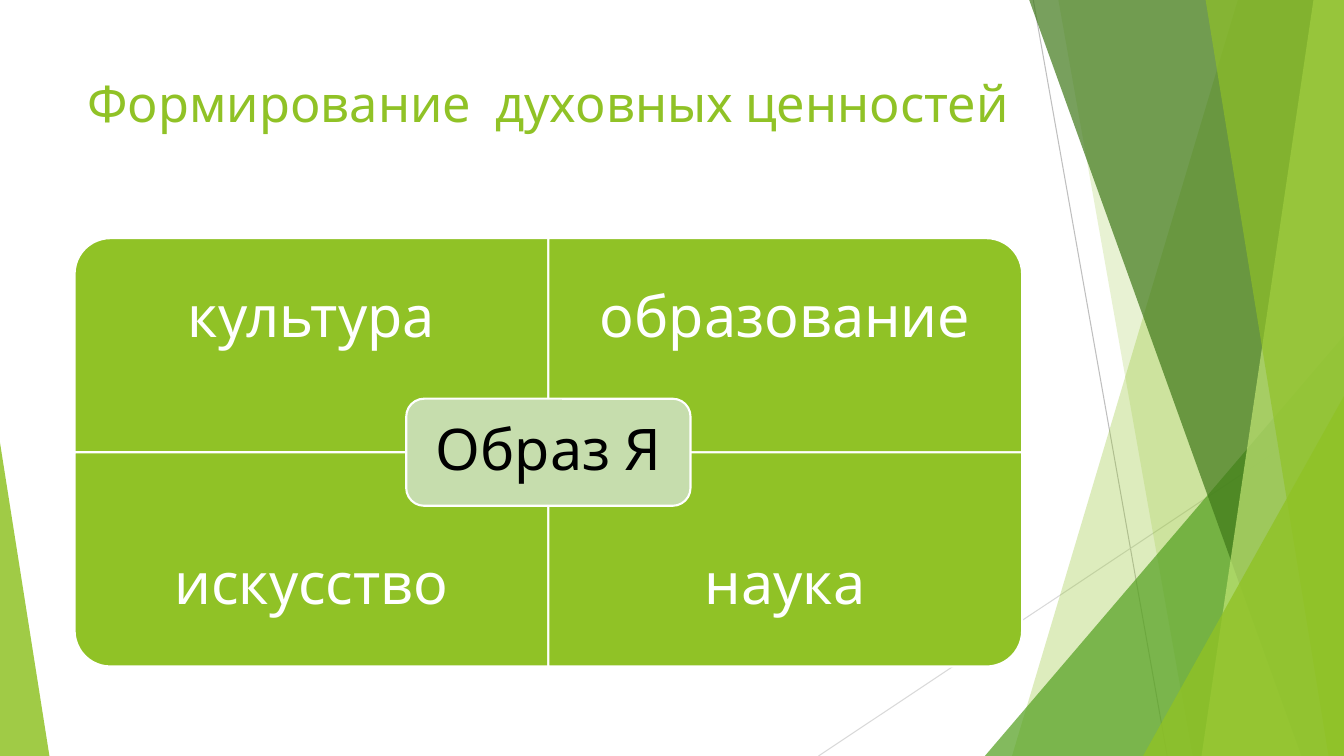
import lxml.etree
import pptx
import pptx.dml.color
import pptx.enum.shapes
import pptx.enum.text
import pptx.oxml.ns
import pptx.util

SHAPE = pptx.enum.shapes.MSO_SHAPE
ANCHOR = pptx.enum.text.MSO_ANCHOR
GREEN = "90C226"
WHITE = "FFFFFF"
FONT = "Karla"

GRID_LEFT, GRID_TOP = 5.55, 31.5
COLUMN, ROW = 35.25, 28.33


def colour(value):
    return pptx.dml.color.RGBColor.from_string(value)


class SlidePainter:
    """Draw styled elements on one slide, with lengths in percent of its size."""

    def __init__(self, deck):
        self.deck = deck
        self.slide = deck.slides.add_slide(deck.slide_layouts[6])
        self.shapes = self.slide.shapes

    def across(self, share):
        return round(self.deck.slide_width * share / 100)

    def down(self, share):
        return round(self.deck.slide_height * share / 100)

    def frame(self, left, top, width, height):
        return self.across(left), self.down(top), self.across(width), self.down(height)

    def paint(self, shape, fill, opacity=100, outline=None):
        shape.shadow.inherit = False
        shape.fill.solid()
        shape.fill.fore_color.rgb = colour(fill)
        if opacity < 100:
            tint = shape.fill._xPr.find(".//" + pptx.oxml.ns.qn("a:srgbClr"))
            alpha = lxml.etree.SubElement(tint, pptx.oxml.ns.qn("a:alpha"))
            alpha.set("val", str(opacity * 1000))
        if outline:
            shape.line.color.rgb = colour(outline)
            shape.line.width = pptx.util.Pt(1.5)
        else:
            shape.line.fill.background()

    def line(self, start, end, tone):
        connector = self.shapes.add_connector(
            pptx.enum.shapes.MSO_CONNECTOR.STRAIGHT,
            self.across(start[0]), self.down(start[1]),
            self.across(end[0]), self.down(end[1]))
        connector.line.color.rgb = colour(tone)
        connector.line.width = pptx.util.Pt(0.75)
        lxml.etree.SubElement(connector._element.spPr, pptx.oxml.ns.qn("a:effectLst"))

    def shard(self, top_left, bottom_left, fill, opacity):
        outline = self.shapes.build_freeform(self.across(top_left), 0)
        corners = [(100, 0), (100, 100), (bottom_left, 100)]
        outline.add_line_segments([(self.across(x), self.down(y)) for x, y in corners])
        self.paint(outline.convert_to_shape(), fill, opacity)

    def triangle(self, left, top, width, apex, fill, opacity):
        shape = self.shapes.add_shape(
            SHAPE.ISOSCELES_TRIANGLE, *self.frame(left, top, width, 100 - top))
        shape.adjustments[0] = apex
        self.paint(shape, fill, opacity)

    def card(self, kind, area, fill, rotation=0):
        left, top, width, height = self.frame(*area)
        if rotation in (90, 270):
            left, top = left + (width - height) // 2, top + (height - width) // 2
            width, height = height, width
        shape = self.shapes.add_shape(kind, left, top, width, height)
        shape.rotation = rotation
        self.paint(shape, fill, outline=WHITE)
        return shape

    def text_box(self, area):
        return self.shapes.add_textbox(*self.frame(*area))

    def label(self, box, text, size, tone, margin=None, anchor=ANCHOR.MIDDLE, spacing=0.9):
        frame = box.text_frame
        frame.text = text
        frame.word_wrap = True
        frame.vertical_anchor = anchor
        if margin is not None:
            inset = pptx.util.Inches(margin)
            frame.margin_left = frame.margin_right = inset
            frame.margin_top = frame.margin_bottom = inset
        para = frame.paragraphs[0]
        para.alignment = pptx.enum.text.PP_ALIGN.CENTER
        para.line_spacing = spacing
        font = para.runs[0].font
        font.name = FONT
        font.size = pptx.util.Pt(size)
        font.color.rgb = colour(tone)


def draw_backdrop(painter):
    painter.line((76.88, 0), (86.85, 100), "BFBFBF")
    painter.line((100, 53.73), (60.9, 100), "D9D9D9")
    painter.shard(92.1, 75.3, GREEN, 30)
    painter.shard(78.75, 88.73, GREEN, 20)
    painter.triangle(73.28, 44.4, 26.72, 1, "54A021", 72)
    painter.shard(76.58, 96.83, "3F7819", 70)
    painter.shard(97.73, 89.4, "C0E474", 70)
    painter.shard(89.7, 98.85, GREEN, 65)
    painter.triangle(85.05, 52.4, 14.95, 1, GREEN, 80)
    painter.triangle(0, 58.53, 3.68, 0, GREEN, 85)


def draw_matrix(painter):
    quadrants = [
        ("культура", 0, 0, 270),
        ("образование", 1, 0, 0),
        ("искусство", 0, 1, 180),
        ("наука", 1, 1, 90),
    ]
    for value, column, row, rotation in quadrants:
        left, top = GRID_LEFT + column * COLUMN, GRID_TOP + row * ROW
        painter.card(SHAPE.ROUND_1_RECTANGLE, (left, top, COLUMN, ROW), GREEN, rotation)
        box = painter.text_box((left, top + row * ROW / 4, COLUMN, ROW * 0.75))
        painter.label(box, value, 41, WHITE, margin=0.32)
    area = (GRID_LEFT + COLUMN * 0.7, GRID_TOP + ROW * 0.75, COLUMN * 0.6, ROW / 2)
    centre = painter.card(SHAPE.ROUNDED_RECTANGLE, area, "C6DDAD")
    painter.label(centre, "Образ Я", 41, "000000", margin=0.17)


def main():
    deck = pptx.Presentation()
    deck.slide_width = pptx.util.Inches(13.33)
    deck.slide_height = pptx.util.Inches(7.5)
    painter = SlidePainter(deck)
    draw_backdrop(painter)
    title = painter.text_box((GRID_LEFT, 8.93, COLUMN * 2, 19.2))
    painter.label(title, "Формирование  духовных ценностей", 36, GREEN,
                  anchor=ANCHOR.TOP, spacing=1.0)
    draw_matrix(painter)
    deck.save("out.pptx")


if __name__ == "__main__":
    main()
